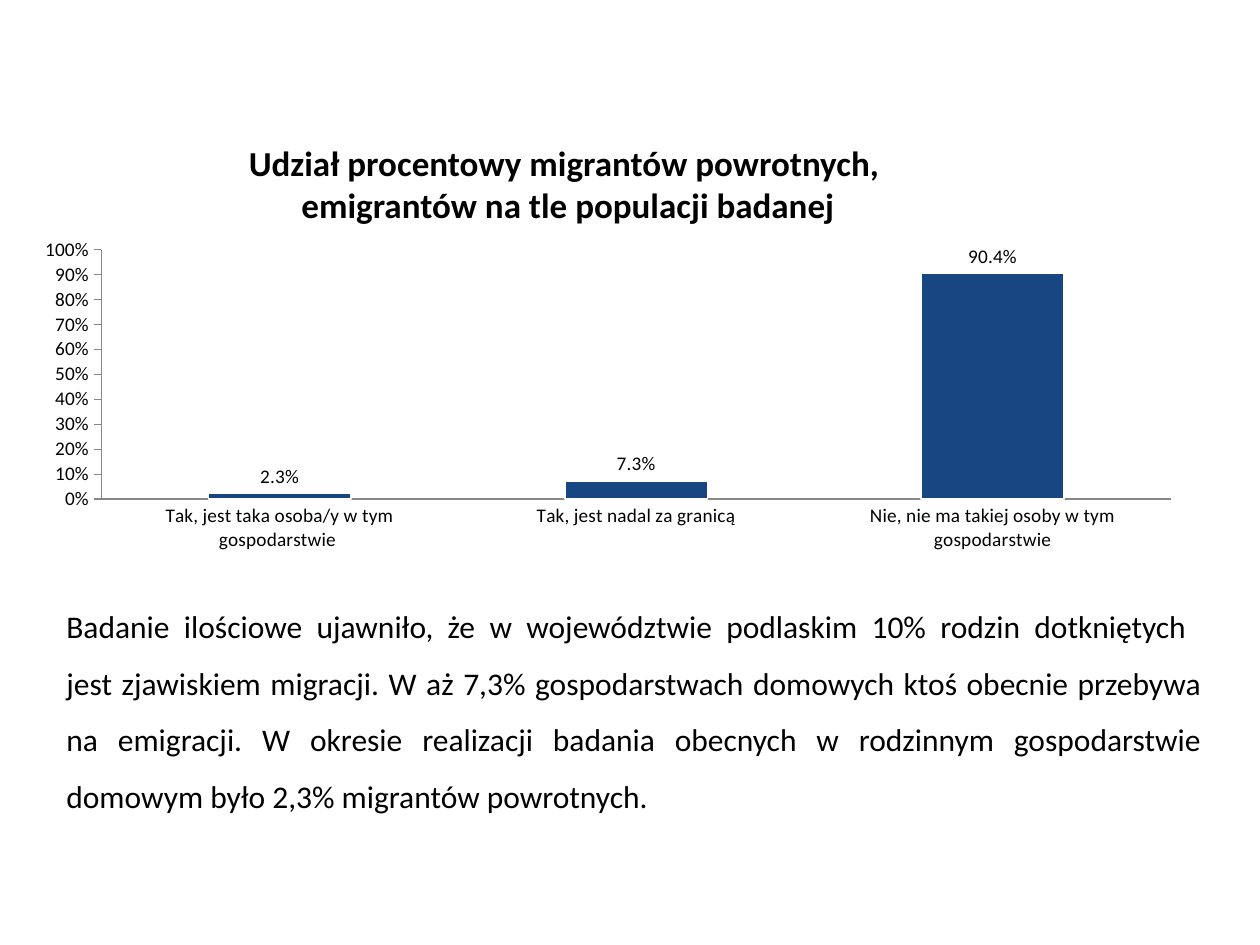
import pptx
import pptx.util
import pptx.chart.data
import pptx.dml.color
import pptx.enum.chart
import pptx.enum.text
import lxml.etree
from dataclasses import dataclass


@dataclass
class Theme:
    font: str = "Calibri"
    ink: str = "000000"
    bar: str = "184683"
    edge: str = "FFFFFF"
    axis: str = "878787"
    head: int = 20
    body: int = 18
    label: int = 11


theme = Theme()
rgb = pptx.dml.color.RGBColor.from_string
Pt = pptx.util.Pt
align = pptx.enum.text.PP_ALIGN
tick = pptx.enum.chart.XL_TICK_MARK


def box(*px):
    """Turn px (126 to the inch) into EMU."""
    return [round(n * 914400 / 126) for n in px]


def fill(frame, lines, size, side, bold=False):
    """Write one paragraph whose lines are parted by line breaks."""
    frame.word_wrap = True
    frame.vertical_anchor = pptx.enum.text.MSO_ANCHOR.TOP
    frame.auto_size = pptx.enum.text.MSO_AUTO_SIZE.SHAPE_TO_FIT_TEXT
    para = frame.paragraphs[0]
    para.alignment = side
    for i, line in enumerate(lines):
        if i:
            para.add_line_break()
        run = para.add_run()
        run.text = line
        run.font.name = theme.font
        run.font.size = Pt(size)
        run.font.bold = bold
        run.font.color.rgb = rgb(theme.ink)
    return para


deck = pptx.Presentation()
deck.slide_width, deck.slide_height = box(1260, 945)
slide = deck.slides.add_slide(deck.slide_layouts[5])

# Title
title = slide.shapes.title
title.left, title.top, title.width, title.height = box(74, 135, 988, 97)
head = fill(title.text_frame,
            ["Udział procentowy migrantów powrotnych, ",
             "emigrantów na tle populacji badanej"],
            theme.head, align.CENTER, True)
head.space_before = Pt(0)

# Body text
note = slide.shapes.add_textbox(*box(54, 582, 1160, 242))
body = fill(note.text_frame,
            ["Badanie ilościowe ujawniło, że w województwie podlaskim 10% "
             "rodzin dotkniętych ",
             "jest zjawiskiem migracji. W aż 7,3% gospodarstwach domowych "
             "ktoś obecnie przebywa na emigracji. W okresie realizacji "
             "badania obecnych w rodzinnym gospodarstwie domowym było 2,3% "
             "migrantów powrotnych. "],
            theme.body, align.JUSTIFY)
body.line_spacing = 1.5

# Column chart
data = pptx.chart.data.CategoryChartData(number_format="0.0%")
data.categories = ["Tak, jest taka osoba/y w tym gospodarstwie ",
                   "Tak, jest nadal za granicą",
                   "Nie, nie ma takiej osoby w tym gospodarstwie"]
data.add_series("Series 1", [0.023, 0.073, 0.904])
kind = pptx.enum.chart.XL_CHART_TYPE.COLUMN_CLUSTERED
chart = slide.shapes.add_chart(kind, *box(44, 224, 1150, 367), data).chart
chart.has_legend = False
chart.has_title = False
chart.font.name = theme.font
chart.font.size = Pt(theme.label)
chart.font.color.rgb = rgb(theme.ink)

# Bars and their labels
plot = chart.plots[0]
plot.vary_by_categories = False
plot.gap_width = 150
bars = plot.series[0].format
bars.fill.solid()
bars.fill.fore_color.rgb = rgb(theme.bar)
bars.line.color.rgb = rgb(theme.edge)
bars.line.width = Pt(1)
plot.has_data_labels = True
tags = plot.data_labels
tags.show_value = True
tags.number_format = "0.0%"
tags.number_format_is_linked = False
tags.position = pptx.enum.chart.XL_LABEL_POSITION.OUTSIDE_END
tags.font.size = Pt(theme.label)

# Axes
for axis, mark in ((chart.category_axis, tick.NONE),
                   (chart.value_axis, tick.OUTSIDE)):
    axis.has_major_gridlines = False
    axis.major_tick_mark = mark
    axis.minor_tick_mark = tick.NONE
    axis.tick_labels.font.size = Pt(theme.label)
    axis.format.line.color.rgb = rgb(theme.axis)
    axis.format.line.width = Pt(0.75)
scale = chart.value_axis
scale.minimum_scale, scale.maximum_scale, scale.major_unit = 0, 1, 0.1
scale.tick_labels.number_format = "0%"
scale.tick_labels.number_format_is_linked = False

# Inner plot area, as shares of the chart
area = plot._element.getparent()
space = "{http://schemas.openxmlformats.org/drawingml/2006/chart}"
for old in area.findall(space + "layout"):
    area.remove(old)
lay = lxml.etree.Element(space + "layout")
area.insert(0, lay)
hand = lxml.etree.SubElement(lay, space + "manualLayout")
for name, val in (("layoutTarget", "inner"), ("xMode", "edge"),
                  ("yMode", "edge"), ("x", "0.05"), ("y", "0.07"),
                  ("w", "0.93"), ("h", "0.68")):
    lxml.etree.SubElement(hand, space + name).set("val", val)

deck.save("out.pptx")
